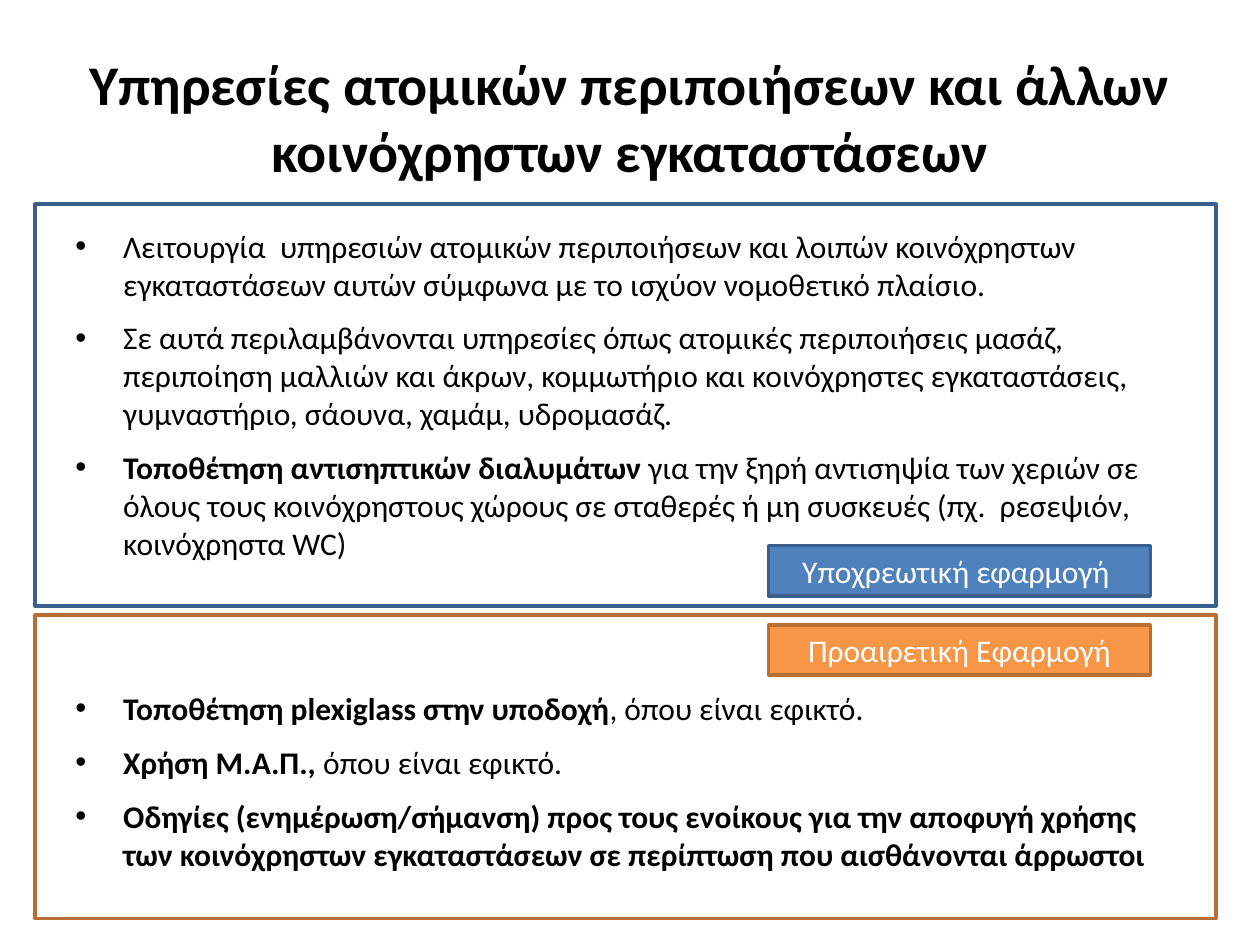
from pptx import Presentation
from pptx.dml.color import RGBColor
from pptx.enum.shapes import MSO_SHAPE
from pptx.enum.text import MSO_ANCHOR, PP_ALIGN
from pptx.util import Inches, Pt
from lxml import etree
from pptx.oxml.ns import qn


def color(value):
    return RGBColor.from_string(value)


def add_run(p, text, size, value, bold=False):
    r = p.add_run()
    r.text = text
    r.font.name = "Calibri"
    r.font.size = Pt(size)
    r.font.bold = bold
    r.font.color.rgb = color(value)


prs = Presentation()
prs.slide_width, prs.slide_height = Inches(10), Inches(7.5)
s = prs.slides.add_slide(prs.slide_layouts[6])

# Title
tf = s.shapes.add_textbox(Inches(0.5), Inches(0.3), Inches(9), Inches(1.25)).text_frame
tf.word_wrap = True
tf.vertical_anchor = MSO_ANCHOR.MIDDLE
p = tf.paragraphs[0]
p.alignment = PP_ALIGN.CENTER
add_run(p, "Υπηρεσίες ατομικών περιποιήσεων και άλλων κοινόχρηστων εγκαταστάσεων",
        32, "000000", True)

# Bulleted lists: top, height, items as (bold part, regular part)
lists = [
    (1.75, 2.95, [
        ("", "Λειτουργία  υπηρεσιών ατομικών περιποιήσεων και λοιπών κοινόχρηστων "
             "εγκαταστάσεων αυτών σύμφωνα με το ισχύον νομοθετικό πλαίσιο."),
        ("", "Σε αυτά περιλαμβάνονται υπηρεσίες όπως ατομικές περιποιήσεις μασάζ, "
             "περιποίηση μαλλιών και άκρων, κομμωτήριο και κοινόχρηστες εγκαταστάσεις, "
             "γυμναστήριο, σάουνα, χαμάμ, υδρομασάζ."),
        ("Τοποθέτηση αντισηπτικών διαλυμάτων ",
         "για την ξηρή αντισηψία των χεριών σε όλους τους κοινόχρηστους χώρους "
         "σε σταθερές ή μη συσκευές (πχ.  ρεσεψιόν, κοινόχρηστα WC)"),
    ]),
    (5.42, 1.79, [
        ("Τοποθέτηση plexiglass στην υποδοχή", ", όπου είναι εφικτό."),
        ("Χρήση Μ.Α.Π., ", "όπου είναι εφικτό."),
        ("Οδηγίες (ενημέρωση/σήμανση) προς τους ενοίκους για την αποφυγή χρήσης "
         "των κοινόχρηστων εγκαταστάσεων σε περίπτωση που αισθάνονται άρρωστοι", ""),
    ]),
]
for top, height, items in lists:
    tf = s.shapes.add_textbox(Inches(0.5), Inches(top), Inches(9.07), Inches(height)).text_frame
    tf.word_wrap = True
    for i, (bold, regular) in enumerate(items):
        p = tf.paragraphs[0] if i == 0 else tf.add_paragraph()
        p.space_before, p.space_after = Pt(3.2), Pt(6)
        pPr = p._p.get_or_add_pPr()
        pPr.set("marL", str(Inches(0.38)))
        pPr.set("indent", str(-Inches(0.38)))
        etree.SubElement(pPr, qn("a:buFont"), typeface="Arial")
        etree.SubElement(pPr, qn("a:buChar"), char="•")
        for text, is_bold in ((bold, True), (regular, False)):
            if text:
                add_run(p, text, 18, "000000", is_bold)

# Labels and frames: left, top, width, height, fill, line, text
boxes = [
    (6.1, 4.33, 3.03, 0.4, "4F81BD", "3A5F8C", "Υποχρεωτική εφαρμογή "),
    (6.1, 4.96, 3.03, 0.4, "F79646", "B76F34", "Προαιρετική Εφαρμογή"),
    (0.28, 1.62, 9.37, 3.19, None, "3A5F8C", None),
    (0.28, 4.88, 9.37, 2.41, None, "B76F34", None),
]
for left, top, width, height, fill, line, text in boxes:
    sp = s.shapes.add_shape(MSO_SHAPE.RECTANGLE, Inches(left), Inches(top),
                            Inches(width), Inches(height))
    sp.shadow.inherit = False
    sp.line.color.rgb = color(line)
    sp.line.width = Pt(2)
    if fill:
        sp.fill.solid()
        sp.fill.fore_color.rgb = color(fill)
    else:
        sp.fill.background()
    if text:
        p = sp.text_frame.paragraphs[0]
        p.alignment = PP_ALIGN.CENTER
        add_run(p, text, 18, "FFFFFF")

prs.save("out.pptx")
